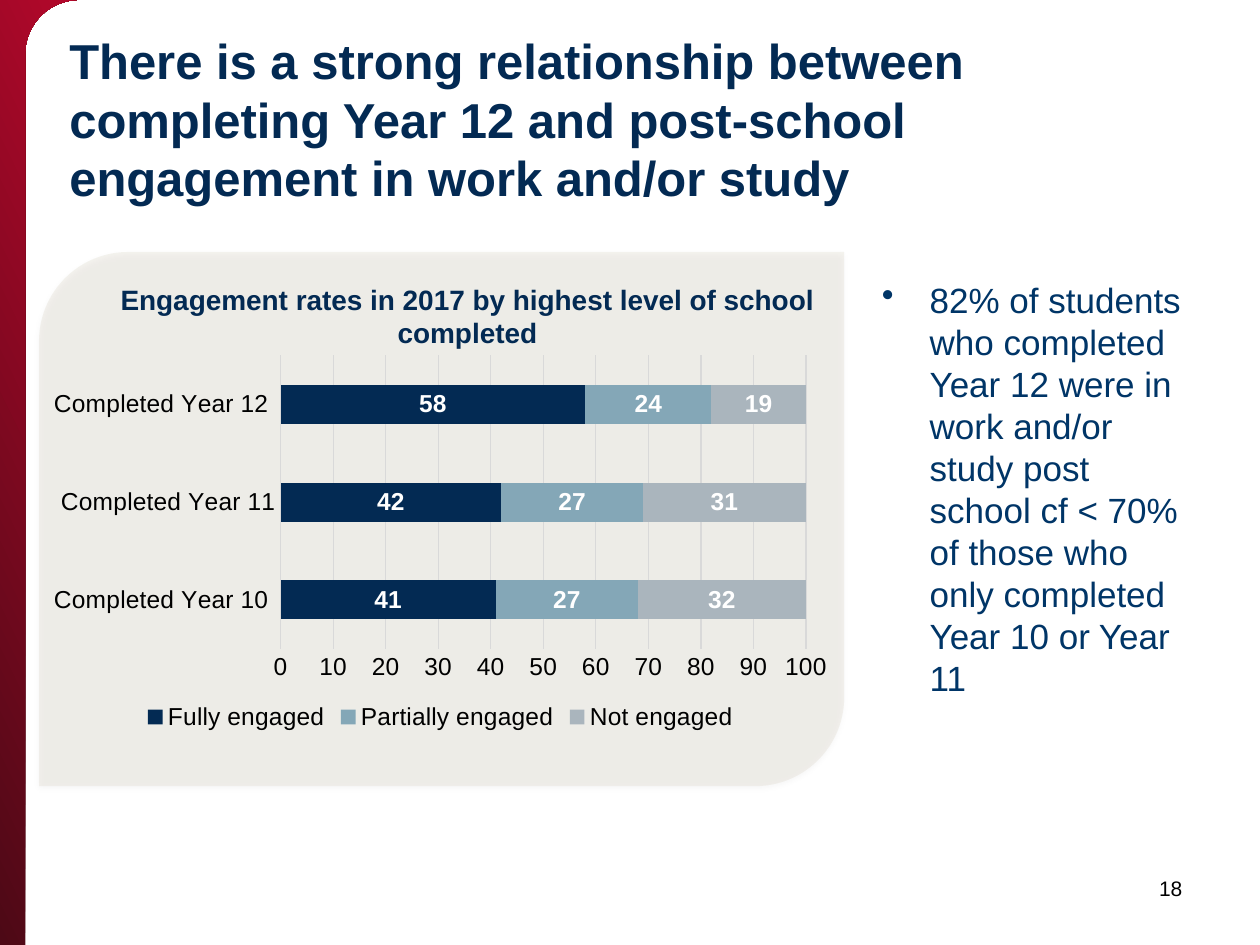
import math

from lxml import etree
from pptx import Presentation
from pptx.chart.data import CategoryChartData
from pptx.dml.color import RGBColor
from pptx.enum.chart import XL_CHART_TYPE, XL_LABEL_POSITION, XL_LEGEND_POSITION, XL_TICK_MARK
from pptx.enum.shapes import MSO_SHAPE
from pptx.enum.text import PP_ALIGN
from pptx.oxml.ns import qn
from pptx.util import Inches, Pt

BAR_STACKED = XL_CHART_TYPE.BAR_STACKED
LABEL_CENTER = XL_LABEL_POSITION.CENTER
LEGEND_BOTTOM = XL_LEGEND_POSITION.BOTTOM
NO_TICK = XL_TICK_MARK.NONE
PANEL_SHAPE = MSO_SHAPE.ROUND_2_DIAG_RECTANGLE
LEFT, CENTER = PP_ALIGN.LEFT, PP_ALIGN.CENTER

FONT = "Arial"
COLORS = {
    "navy": "032A53", "blue": "003567", "steel": "84A7B7", "gray": "AAB5BD",
    "grid": "D9D9D9", "sand": "A39468", "black": "000000", "white": "FFFFFF",
    "maroon": "4D0916", "red": "B4082B",
}

TITLE = ("There is a strong relationship between completing Year 12 "
         "and post-school engagement in work and/or study")
CHART_TITLE = "Engagement rates in 2017 by highest level of school completed"
FINDING = ("82% of students who completed Year 12 were in work and/or study post school "
           "cf < 70% of those who only completed Year 10 or Year 11")
PAGE_NUMBER = "18"
SCHOOL_LEVELS = ["Completed Year 10 ", "Completed Year 11", "Completed Year 12 "]
ENGAGEMENT = [
    ("Fully engaged", "navy", (41, 42, 58)),
    ("Partially engaged", "steel", (27, 27, 24)),
    ("Not engaged", "gray", (32, 31, 19)),
]

SLIDE_W, SLIDE_H = 10, 7.5
BAND_W, CORNER_R = 0.2, 0.43


def color(name):
    return RGBColor.from_string(COLORS[name])


def style(font, size, color_name, bold=False):
    font.name, font.size, font.bold = FONT, Pt(size), bold
    font.color.rgb = color(color_name)


def add_text(slide, box, text, size, color_name, bold=False, align=LEFT,
             inset=None, bullet_indent=None):
    frame = slide.shapes.add_textbox(*map(Inches, box)).text_frame
    frame.word_wrap = True
    if inset is not None:
        frame.margin_left = frame.margin_right = Inches(inset)
        frame.margin_top = frame.margin_bottom = Inches(inset)
    paragraph = frame.paragraphs[0]
    paragraph.text = text
    paragraph.alignment = align
    if bullet_indent:
        properties = paragraph._p.get_or_add_pPr()
        properties.set("marL", str(Inches(bullet_indent)))
        properties.set("indent", str(-Inches(bullet_indent)))
        etree.SubElement(properties, qn("a:buChar")).set("char", "•")
    style(paragraph.font, size, color_name, bold)


def add_side_band(slide):
    """Red band down the left edge, with a concave curve at its top right."""
    right = BAND_W + CORNER_R
    outline = []
    for degrees in range(0, 91, 3):
        angle = math.radians(degrees)
        outline.append((right - CORNER_R * math.sin(angle), CORNER_R * (1 - math.cos(angle))))
    outline += [(BAND_W, SLIDE_H), (0, SLIDE_H)]
    builder = slide.shapes.build_freeform(0, 0)
    builder.add_line_segments([(Inches(x), Inches(y)) for x, y in outline], close=True)
    band = builder.convert_to_shape()
    band.shadow.inherit = False
    band.line.fill.background()
    band.fill.gradient()
    band.fill.gradient_angle = 26
    for stop, name, position in zip(band.fill.gradient_stops, ("maroon", "red"), (0, 1)):
        stop.color.rgb = color(name)
        stop.position = position


def set_alpha(color_element, percent):
    etree.SubElement(color_element, qn("a:alpha")).set("val", str(percent * 1000))


def add_panel(slide):
    panel = slide.shapes.add_shape(PANEL_SHAPE, *map(Inches, (0.31, 2, 6.39, 4.24)))
    panel.line.fill.background()
    panel.fill.solid()
    panel.fill.fore_color.rgb = color("sand")
    properties = panel._element.spPr
    set_alpha(properties.find(qn("a:solidFill")).find(qn("a:srgbClr")), 10)
    panel.shadow.inherit = False
    shadow = etree.SubElement(properties.find(qn("a:effectLst")), qn("a:outerShdw"),
                              blurRad=str(Pt(3.1)), dist=str(Pt(1.8)), dir="5400000",
                              rotWithShape="0")
    set_alpha(etree.SubElement(shadow, qn("a:srgbClr"), val=COLORS["black"]), 35)


def add_engagement_chart(slide):
    data = CategoryChartData(number_format="0")
    data.categories = SCHOOL_LEVELS
    for name, _, rates in ENGAGEMENT:
        data.add_series(name, rates)
    box = map(Inches, (0.3, 2.76, 6.39, 3.08))
    chart = slide.shapes.add_chart(BAR_STACKED, *box, data).chart
    style(chart.font, 10, "black")
    chart.has_title = False
    chart.has_legend = True
    chart.legend.position = LEGEND_BOTTOM
    chart.legend.include_in_layout = False
    style(chart.legend.font, 14, "black")

    levels, rate = chart.category_axis, chart.value_axis
    for axis in (levels, rate):
        axis.major_tick_mark = axis.minor_tick_mark = NO_TICK
        style(axis.tick_labels.font, 14, "black")
    rate.minimum_scale, rate.maximum_scale, rate.major_unit = 0, 100, 10
    rate.tick_labels.number_format = "0"
    rate.tick_labels.number_format_is_linked = False
    rate.has_major_gridlines = True
    rate.format.line.fill.background()
    for line in (levels.format.line, rate.major_gridlines.format.line):
        line.color.rgb = color("grid")
        line.width = Pt(0.75)

    plot = chart.plots[0]
    plot.gap_width, plot.overlap, plot.vary_by_categories = 150, 100, False
    for series, (_, color_name, _) in zip(plot.series, ENGAGEMENT):
        series.format.fill.solid()
        series.format.fill.fore_color.rgb = color(color_name)
        labels = series.data_labels
        labels.show_value = True
        labels.position = LABEL_CENTER
        labels.number_format = "0"
        labels.number_format_is_linked = False
        style(labels.font, 14, "white", bold=True)


def main():
    deck = Presentation()
    deck.slide_width, deck.slide_height = Inches(SLIDE_W), Inches(SLIDE_H)
    slide = deck.slides.add_slide(deck.slide_layouts[6])
    add_side_band(slide)
    add_text(slide, (9.1, 6.9, 0.45, 0.3), PAGE_NUMBER, 12, "black")
    add_panel(slide)
    add_text(slide, (0.55, 0.24, 7.48, 0.98), TITLE, 28, "navy", bold=True, inset=0)
    add_engagement_chart(slide)
    add_text(slide, (0.47, 2.19, 6.48, 0.64), CHART_TITLE, 16, "navy", bold=True, align=CENTER)
    add_text(slide, (6.9, 2.16, 2.66, 3.47), FINDING, 20, "blue", bullet_indent=0.38)
    deck.save("out.pptx")


if __name__ == "__main__":
    main()
